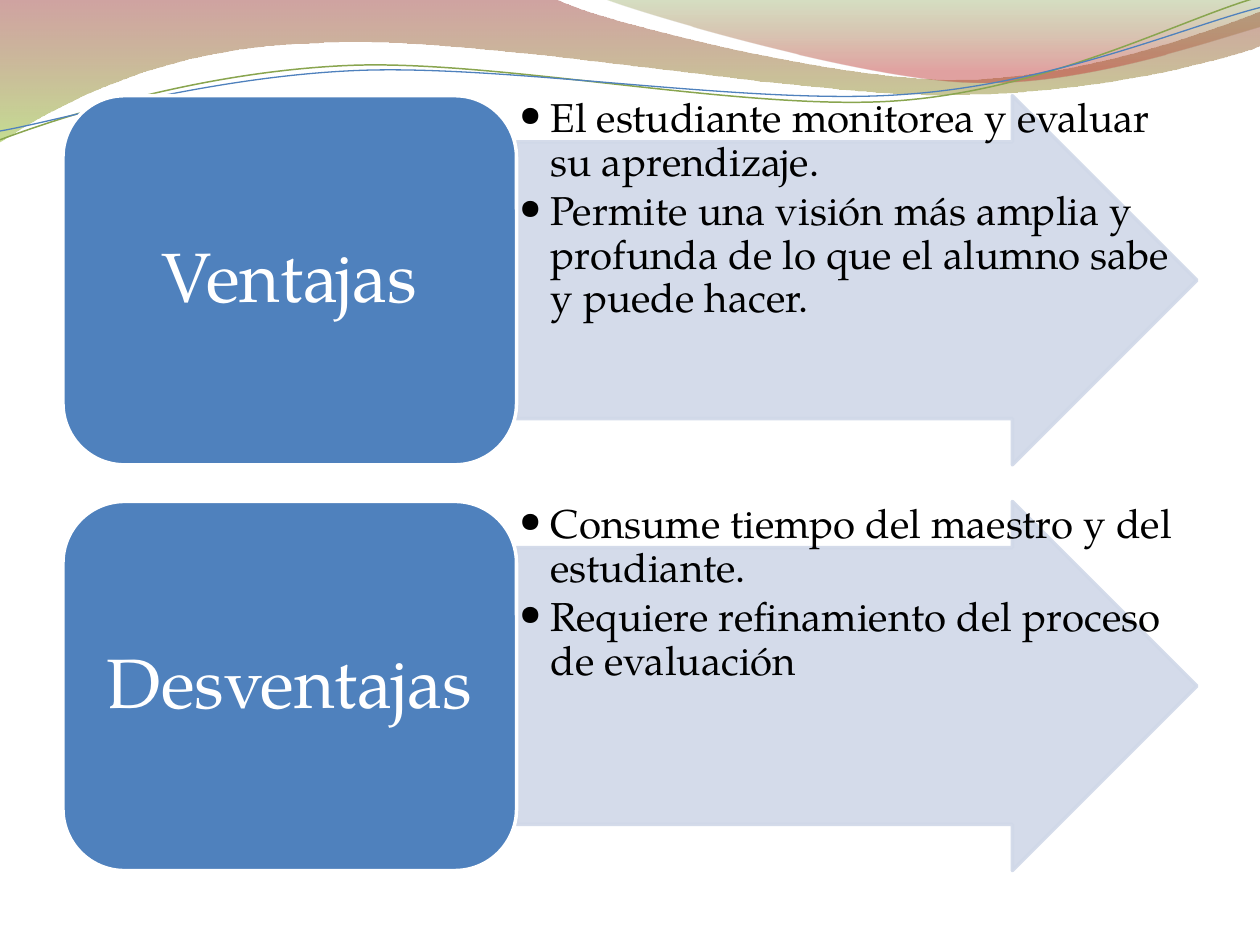
import pptx
import pptx.dml.color
import pptx.enum.shapes
import pptx.enum.text
import pptx.oxml.ns
import pptx.util
from lxml import etree

Inches, Pt = pptx.util.Inches, pptx.util.Pt
qn = pptx.oxml.ns.qn
SHAPES = pptx.enum.shapes.MSO_SHAPE
TEXT = pptx.enum.text

THEME = {
    "font": "TeX Gyre Pagella",
    "box": "4F81BD", "arrow": "D0D8E8", "edge": "FFFFFF",
    "label": "FFFFFF", "body": "000000",
    "label_size": 40, "body_size": 23, "edge_width": 2, "arrow_opacity": 90,
    "spacing": 0.9, "body_gap": 0.15,
}

SECTIONS = [
    ("Ventajas", [
        "El estudiante monitorea y evaluar su aprendizaje.",
        "Permite una visión más amplia y profunda de lo que el alumno sabe y puede hacer.",
    ]),
    ("Desventajas", [
        "Consume tiempo del maestro y del estudiante.",
        "Requiere refinamiento del proceso de evaluación",
    ]),
]

WAVES = [
    {"start": (0, 0),
     "segments": [
         [(4.4, -0.01)],
         [(4.76, 0.17), (6.64, 0.63), (7.58, 0.63)],
         [(8.53, 0.63), (9.58, 0.26), (10, 0.09)],
         [(10.01, 0.36)],
         [(9.83, 0.44), (8.7, 0.76), (7.46, 0.75)],
         [(6.22, 0.75), (3.82, 0.28), (2.57, 0.34)],
         [(1.29, 0.36), (0.46, 0.83), (-0.01, 1.13)],
         [(0, 0)]],
     "stops": [(0, "973330", 45), (1, "95C238", 55)]},
    {"start": (4.79, -0.01),
     "segments": [
         [(5.09, 0.11), (6.82, 0.62), (7.69, 0.65)],
         [(8.56, 0.69), (9.61, 0.32), (10, 0.21)],
         [(10, 0)],
         [(4.79, -0.01)]],
     "stops": [(0, "769537", 30), (0.8, "BE3330", 45)]},
    {"start": (0, 1.11),
     "segments": [
         [(0.48, 0.93), (1.58, 0.57), (2.77, 0.52)],
         [(3.95, 0.47), (5.93, 0.89), (7.13, 0.8)],
         [(8.33, 0.71), (9.38, 0.15), (9.98, -0.02)]],
     "line": ("89A54F", 0.85)},
    {"start": (0, 1.04),
     "segments": [
         [(0.47, 0.96), (1.64, 0.61), (2.83, 0.56)],
         [(4.03, 0.51), (5.97, 0.84), (7.17, 0.75)],
         [(8.36, 0.67), (9.41, 0.21), (10, 0.06)]],
     "line": ("4F81BD", 0.75)},
]

LEFT, TOP, BOX_WIDTH, ARROW_WIDTH, HEIGHT, GAP = 0.5, 0.76, 3.6, 5.4, 2.93, 0.29


def rgb(code):
    return pptx.dml.color.RGBColor.from_string(code)


def set_opacity(shape, percents):
    colors = list(shape.element.spPr.iter(qn("a:srgbClr")))
    for color, percent in zip(colors, percents):
        etree.SubElement(color, qn("a:alpha"), val=str(percent * 1000))


def bend(shape, segments):
    steps = iter(list(shape.element.spPr.iter(qn("a:lnTo"))))
    for segment in segments:
        group = [next(steps) for _ in segment]
        if len(group) == 3:
            curve = etree.Element(qn("a:cubicBezTo"))
            group[0].addprevious(curve)
            for step in group:
                curve.append(step[0])
                step.getparent().remove(step)


def add_wave(page, wave):
    points = [(Inches(x), Inches(y)) for segment in wave["segments"] for x, y in segment]
    builder = page.shapes.build_freeform(*map(Inches, wave["start"]))
    builder.add_line_segments(points, close="stops" in wave)
    shape = builder.convert_to_shape()
    bend(shape, wave["segments"])
    shape.shadow.inherit = False
    if "line" in wave:
        color, width = wave["line"]
        shape.fill.background()
        shape.line.color.rgb = rgb(color)
        shape.line.width = Pt(width)
        return
    shape.line.fill.background()
    shape.fill.gradient()
    shape.fill.gradient_angle = 270
    for stop, (position, color, _) in zip(shape.fill.gradient_stops, wave["stops"]):
        stop.position = position
        stop.color.rgb = rgb(color)
    set_opacity(shape, [opacity for _, _, opacity in wave["stops"]])


def add_panel(page, kind, left, top, width, fill, edge):
    shape = page.shapes.add_shape(kind, Inches(left), Inches(top), Inches(width), Inches(HEIGHT))
    shape.shadow.inherit = False
    shape.fill.solid()
    shape.fill.fore_color.rgb = rgb(fill)
    shape.line.color.rgb = rgb(edge)
    shape.line.width = Pt(THEME["edge_width"])
    return shape


def prepare_frame(shape, inset, anchor):
    frame = shape.text_frame
    frame.word_wrap = True
    frame.vertical_anchor = anchor
    frame.margin_left = frame.margin_right = Inches(inset)
    frame.margin_top = frame.margin_bottom = Inches(inset)
    return frame


def write(para, text, role):
    para.line_spacing = THEME["spacing"]
    span = para.add_run()
    span.text = text
    span.font.name = THEME["font"]
    span.font.size = Pt(THEME[role + "_size"])
    span.font.color.rgb = rgb(THEME[role])


def add_bullets(page, items, left, top):
    box = page.shapes.add_textbox(Inches(left), Inches(top), Inches(ARROW_WIDTH), Inches(HEIGHT))
    frame = prepare_frame(box, 0.02, TEXT.MSO_ANCHOR.TOP)
    for index, item in enumerate(items):
        para = frame.add_paragraph() if index else frame.paragraphs[0]
        para.level = 1
        write(para, item, "body")
        para.space_after = Pt(THEME["body_size"] * THEME["body_gap"])
        properties = para._p.get_or_add_pPr()
        properties.set("marL", str(Inches(0.25)))
        properties.set("indent", str(Inches(-0.25)))
        etree.SubElement(properties, qn("a:buFont"), typeface=THEME["font"])
        etree.SubElement(properties, qn("a:buChar"), char="•")


def add_section(page, label, items, top):
    middle = LEFT + BOX_WIDTH
    arrow = add_panel(page, SHAPES.RIGHT_ARROW, middle, top, ARROW_WIDTH,
                      THEME["arrow"], THEME["arrow"])
    arrow.adjustments[0] = 0.75
    arrow.adjustments[1] = 0.5
    set_opacity(arrow, [THEME["arrow_opacity"]] * 2)
    add_bullets(page, items, middle, top)
    box = add_panel(page, SHAPES.ROUNDED_RECTANGLE, LEFT, top, BOX_WIDTH,
                    THEME["box"], THEME["edge"])
    para = prepare_frame(box, 0.03, TEXT.MSO_ANCHOR.MIDDLE).paragraphs[0]
    para.alignment = TEXT.PP_ALIGN.CENTER
    write(para, label, "label")


def main():
    """Build the slide of advantages and disadvantages."""
    deck = pptx.Presentation()
    deck.slide_width, deck.slide_height = Inches(10), Inches(7.5)
    page = deck.slides.add_slide(deck.slide_layouts[6])
    for wave in WAVES:
        add_wave(page, wave)
    for row, (label, items) in enumerate(SECTIONS):
        add_section(page, label, items, TOP + row * (HEIGHT + GAP))
    deck.save("out.pptx")


if __name__ == "__main__":
    main()
